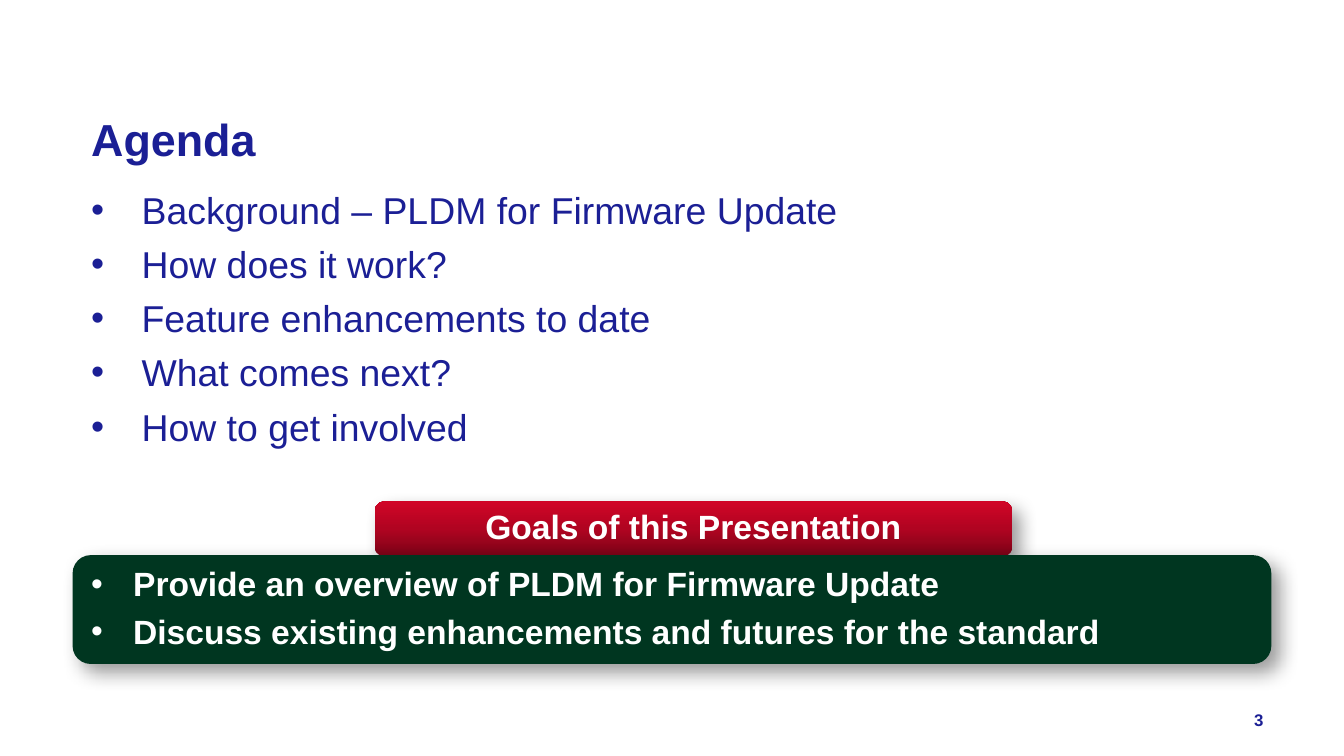
"""Build the agenda slide with its goals panel."""
from lxml import etree
from pptx import Presentation
from pptx.dml.color import RGBColor
from pptx.enum import shapes, text
from pptx.oxml import parse_xml
from pptx.oxml.ns import nsdecls, qn
from pptx.util import Pt

THEME = {
    "font": "Arial",
    "navy": "1B1F95", "white": "FFFFFF", "green": "003620", "shadow": "000000",
    "reds": [(0, "7C0317"), (50, "B00421"), (100, "D10527")],
    "title": 24, "body": 20, "goal": 18, "number": 9,
}
AGENDA = [
    "Background – PLDM for Firmware Update",
    "How does it work?",
    "Feature enhancements to date",
    "What comes next?",
    "How to get involved",
]
GOALS = [
    "Provide an overview of PLDM for Firmware Update",
    "Discuss existing enhancements and futures for the standard",
]
MIDDLE = text.MSO_ANCHOR.MIDDLE
CENTER, RIGHT = text.PP_ALIGN.CENTER, text.PP_ALIGN.RIGHT

TEXTS = [
    {"at": (41.8, 54, 635.8, 40.3), "lines": ["Agenda"], "size": "title",
     "color": "navy", "bold": True, "frame": {"vertical_anchor": MIDDLE}},
    {"at": (41.8, 94.3, 635.8, 152.6), "lines": AGENDA, "size": "body",
     "color": "navy", "indent": 27, "gap": 5, "frame": {"margin_top": Pt(6)}},
    {"at": (540, 376.6, 144, 13.7), "lines": ["3"], "size": "number",
     "color": "navy", "bold": True, "format": {"alignment": RIGHT}},
]
PANELS = [
    {"at": (200.9, 268.6, 341.3, 29.5), "lines": ["Goals of this Presentation"],
     "fill": "reds", "format": {"alignment": CENTER, "line_spacing": 0.9}},
    {"at": (38.9, 297.4, 642.2, 58.3), "lines": GOALS, "fill": "green", "indent": 22.5,
     "gap": 6, "format": {"alignment": text.PP_ALIGN.LEFT, "line_spacing": 0.9}},
]
PANEL_TEXT = {"size": "goal", "color": "white", "bold": True,
              "frame": {"vertical_anchor": MIDDLE}}


def apply(target, values):
    for name, value in values.items():
        setattr(target, name, value)


def add_bullet(para, indent):
    properties = para._p.get_or_add_pPr()
    properties.set("marL", str(Pt(indent)))
    properties.set("indent", str(-Pt(indent)))
    etree.SubElement(properties, qn("a:buFont"), typeface=THEME["font"])
    etree.SubElement(properties, qn("a:buChar"), char="•")


def write(box, item):
    frame = box.text_frame
    apply(frame, {"word_wrap": True, **item.get("frame", {})})
    for index, line in enumerate(item["lines"]):
        para = frame.paragraphs[0] if index == 0 else frame.add_paragraph()
        apply(para, item.get("format", {}))
        if index:
            para.space_before = Pt(item["gap"])
        if "indent" in item:
            add_bullet(para, item["indent"])
        span = para.add_run()
        span.text = line
        apply(span.font, {"name": THEME["font"], "size": Pt(THEME[item["size"]]),
                          "bold": item.get("bold", False)})
        span.font.color.rgb = RGBColor.from_string(THEME[item["color"]])


def paint_gradient(shape, stops):
    shape.fill.background()
    marks = "".join(f'<a:gs pos="{place * 1000}"><a:srgbClr val="{color}"/></a:gs>'
                    for place, color in stops)
    gradient = parse_xml(f'<a:gradFill {nsdecls("a")} rotWithShape="1"><a:gsLst>{marks}'
                         '</a:gsLst><a:lin ang="16200000" scaled="0"/></a:gradFill>')
    properties = shape._element.spPr
    properties.replace(properties.find(qn("a:noFill")), gradient)


def add_shadow(shape):
    shape.shadow.inherit = False
    effects = shape._element.spPr.find(qn("a:effectLst"))
    effects.append(parse_xml(
        f'<a:outerShdw {nsdecls("a")} blurRad="{Pt(10)}" dist="{Pt(6)}" dir="2700000" '
        f'algn="tl" rotWithShape="0"><a:srgbClr val="{THEME["shadow"]}">'
        '<a:alpha val="40000"/></a:srgbClr></a:outerShdw>'))


def add_panel(page, item):
    shape = page.shapes.add_shape(shapes.MSO_SHAPE.ROUNDED_RECTANGLE, *map(Pt, item["at"]))
    fill = THEME[item["fill"]]
    if isinstance(fill, list):
        paint_gradient(shape, fill)
    else:
        shape.fill.solid()
        shape.fill.fore_color.rgb = RGBColor.from_string(fill)
    shape.line.fill.background()
    add_shadow(shape)
    write(shape, {**PANEL_TEXT, **item})


def main():
    deck = Presentation()
    apply(deck, {"slide_width": Pt(720), "slide_height": Pt(405)})
    page = deck.slides.add_slide(deck.slide_layouts[6])
    for item in TEXTS:
        write(page.shapes.add_textbox(*map(Pt, item["at"])), item)
    for item in PANELS:
        add_panel(page, item)
    deck.save("out.pptx")


if __name__ == "__main__":
    main()
